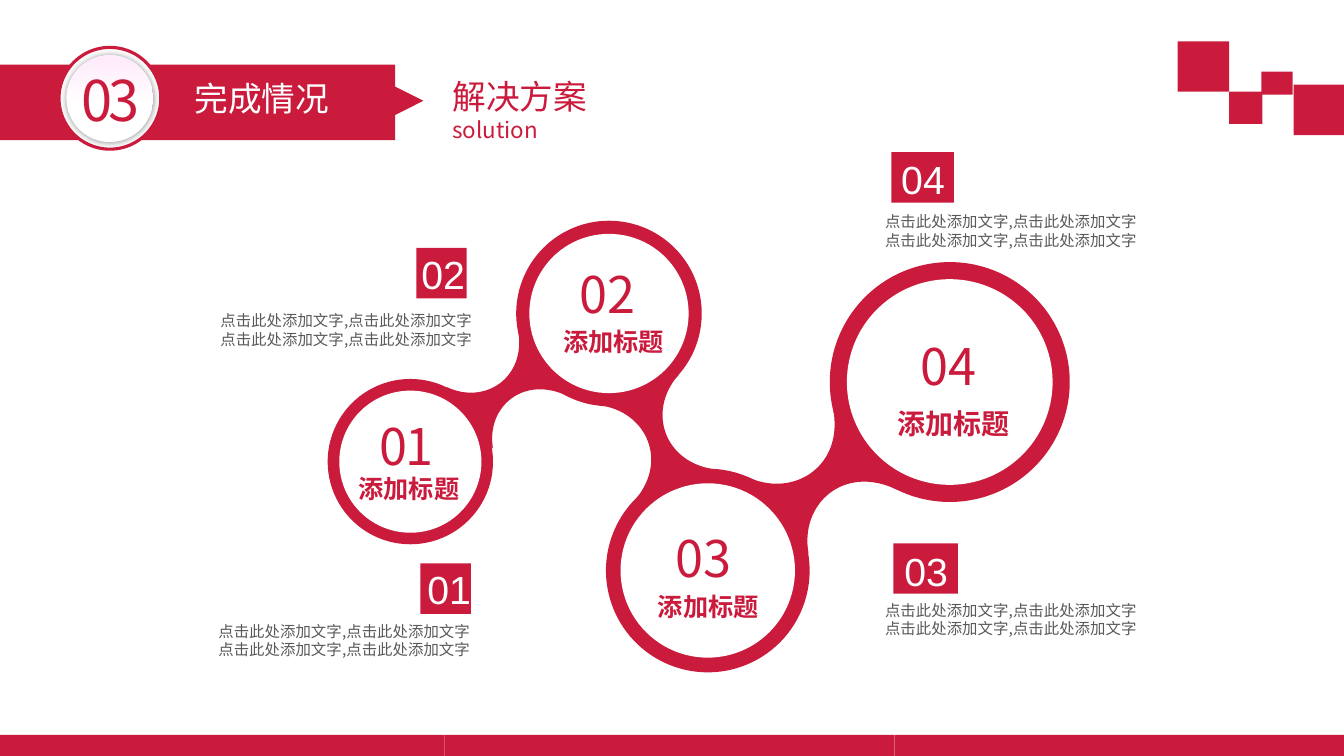
import pptx
import pptx.dml.color
import pptx.enum.dml
import pptx.enum.shapes
import pptx.enum.text
import pptx.oxml
import pptx.oxml.ns
import pptx.util
from lxml import etree

Inches = pptx.util.Inches
RGBColor = pptx.dml.color.RGBColor
SHAPE = pptx.enum.shapes.MSO_SHAPE
ALIGN = pptx.enum.text.PP_ALIGN
qn = pptx.oxml.ns.qn

CRIMSON = RGBColor(0xCB, 0x1B, 0x3D)
WHITE = RGBColor(0xFF, 0xFF, 0xFF)
PINK = RGBColor(0xFF, 0xEB, 0xFA)
GREY = RGBColor(0x59, 0x59, 0x59)
CJK = "Noto Sans CJK SC"
GLOW = (
    f'<a:effectLst {pptx.oxml.ns.nsdecls("a")}>'
    '<a:outerShdw blurRad="63500" dist="0" dir="0" algn="ctr" rotWithShape="0">'
    '<a:srgbClr val="000000"><a:alpha val="40000"/></a:srgbClr>'
    '</a:outerShdw></a:effectLst>'
)


def write(paragraph, text, size=11, color=CRIMSON, font=CJK, bold=False,
          align=ALIGN.LEFT, spacing=0):
    """Add one formatted run to a paragraph."""
    paragraph.alignment = align
    run = paragraph.add_run()
    run.text = text
    run.font.size = pptx.util.Pt(size)
    run.font.name = font
    run.font.bold = bold
    run.font.color.rgb = color
    properties = run._r.get_or_add_rPr()
    etree.SubElement(properties, qn("a:ea")).set("typeface", font)
    if spacing:
        properties.set("spc", str(round(spacing * 100)))


def curve(segments):
    """Merge three line segments into one cubic curve."""
    first = segments[0]
    bend = etree.Element(qn("a:cubicBezTo"))
    first.addprevious(bend)
    for segment in segments:
        bend.append(segment[0])
        segment.getparent().remove(segment)


class Deck:
    """Hold the slide and draw its elements in one style."""

    def __init__(self):
        """Open a presentation with one blank slide."""
        self.presentation = pptx.Presentation()
        self.presentation.slide_width = Inches(13.33)
        self.presentation.slide_height = Inches(7.5)
        self.slide = self.presentation.slides.add_slide(
            self.presentation.slide_layouts[6])

    def paint(self, shape, fill=CRIMSON):
        """Give a shape a plain fill without outline or shadow."""
        shape.shadow.inherit = False
        shape.fill.solid()
        shape.fill.fore_color.rgb = fill
        shape.line.fill.background()
        return shape

    def shape(self, kind, left, top, width, height, fill=CRIMSON, rotation=0):
        """Add a plain preset shape."""
        shape = self.slide.shapes.add_shape(
            kind, Inches(left), Inches(top), Inches(width), Inches(height))
        shape.rotation = rotation
        return self.paint(shape, fill)

    def disc(self, center_x, center_y, diameter, fill=CRIMSON):
        """Add a circle by its centre."""
        return self.shape(SHAPE.OVAL, center_x - diameter / 2,
                          center_y - diameter / 2, diameter, diameter, fill)

    def link(self, upper, lower):
        """Add a neck between two circles, bounded by two curves."""
        start, *rest = [(Inches(x), Inches(y)) for x, y in upper + lower]
        builder = self.slide.shapes.build_freeform(*start)
        builder.add_line_segments(rest, close=True)
        neck = self.paint(builder.convert_to_shape())
        segments = list(neck._element.spPr.iter(qn("a:lnTo")))
        curve(segments[:3])
        curve(segments[4:7])

    def text(self, left, top, width, height, *lines, wrap=True, **style):
        """Add a text box; a line is a string or a (string, size) pair."""
        box = self.slide.shapes.add_textbox(
            Inches(left), Inches(top), Inches(width), Inches(height))
        frame = box.text_frame
        frame.word_wrap = wrap
        frame.auto_size = pptx.enum.text.MSO_AUTO_SIZE.SHAPE_TO_FIT_TEXT
        for index, line in enumerate(lines):
            paragraph = frame.add_paragraph() if index else frame.paragraphs[0]
            if isinstance(line, tuple):
                write(paragraph, line[0], **{**style, "size": line[1]})
            else:
                write(paragraph, line, **style)

    def header(self):
        """Draw the section banner with its number medallion."""
        self.shape(SHAPE.RECTANGLE, -0.03, 0.64, 3.95, 0.75)
        self.shape(SHAPE.ISOSCELES_TRIANGLE, 3.92, 0.86, 0.28, 0.28, rotation=90)
        rim = self.disc(1.09, 0.975, 1.01, WHITE)
        rim.line.color.rgb = CRIMSON
        rim.line.width = pptx.util.Pt(2.25)
        face = self.disc(1.09, 0.98, 0.86, WHITE)
        face.fill.gradient()
        face.fill.gradient_angle = 90
        for stop, (position, color) in zip(face.fill.gradient_stops,
                                           ((0.4, WHITE), (1, PINK))):
            stop.position = position
            stop.color.rgb = color
        properties = face._element.spPr
        properties.replace(properties.find(qn("a:effectLst")),
                           pptx.oxml.parse_xml(GLOW))
        self.text(0.71, 0.6, 0.97, 0.77, "03", size=40, spacing=-3)
        self.text(1.83, 0.72, 2.08, 0.5, "完成情况", size=24, color=WHITE)
        self.text(4.39, 0.7, 2.94, 0.77, ("解决方案", 24), ("solution", 16))


LINKS = (
    (((4.43, 3.84), (4.81, 4.02), (5.22, 3.75), (5.14, 3.28)),
     ((5.63, 3.93), (5.2, 3.72), (4.82, 4.03), (4.89, 4.45))),
    (((6.73, 3.72), (6.41, 4.08), (6.59, 4.61), (7.12, 4.66)),
     ((6.28, 4.98), (6.64, 4.59), (6.42, 4.08), (5.94, 4.02))),
    (((7.43, 4.74), (7.89, 4.94), (8.38, 4.61), (8.26, 4.04)),
     ((8.9, 4.86), (8.37, 4.6), (7.93, 5), (8.02, 5.49))),
)
RINGS = ((4.07, 4.58, 1.64, 1.41), (6.04, 3.11, 1.84, 1.58),
         (7.02, 5.66, 2.02, 1.73), (9.42, 3.79, 2.38, 2.04))
LABELS = (
    ("01", (3.67, 4.07, 0.75, 0.71), -1.5, (3.45, 4.65, 1.21, 0.4), 18),
    ("02", (5.65, 2.56, 0.79, 0.71), 0, (5.43, 3.19, 1.31, 0.4), 18),
    ("03", (6.6, 5.18, 0.79, 0.71), 0, (6.42, 5.82, 1.21, 0.4), 18),
    ("04", (9.03, 3.28, 0.79, 0.71), 0, (8.8, 3.98, 1.32, 0.44), 20),
)
NOTES = (
    ("01", (4.17, 5.59, 0.5), (4.14, 5.56), (1.09, 6.12, 3.67, 0.47), ALIGN.RIGHT),
    ("04", (8.84, 1.51, 0.62), (8.84, 1.49), (8.68, 2.06, 3.6, 0.47), ALIGN.LEFT),
    ("02", (4.13, 2.46, 0.5), (4.08, 2.43), (1.33, 3.04, 3.45, 0.71), ALIGN.RIGHT),
    ("03", (8.86, 5.39, 0.64), (8.87, 5.38), (8.68, 5.91, 3.6, 0.47), ALIGN.LEFT),
)
MOSAIC = ((12.83, 0.84, 0.51, 0.5), (11.68, 0.41, 0.51, 0.5),
          (12.19, 0.91, 0.33, 0.32), (12.51, 0.71, 0.31, 0.23))
NOTE_LINE = "点击此处添加文字,点击此处添加文字"


def main():
    """Build the slide and save it."""
    deck = Deck()
    for upper, lower in LINKS:
        deck.link(upper, lower)
    for center_x, center_y, outer, inner in RINGS:
        deck.disc(center_x, center_y, outer)
        deck.disc(center_x, center_y, inner, WHITE)
    for number, number_area, spacing, title_area, title_size in LABELS:
        deck.text(*title_area, "添加标题", wrap=False, size=title_size,
                  bold=True, align=ALIGN.CENTER)
        deck.text(*number_area, number, wrap=False, size=36, spacing=spacing)
    for number, badge, number_corner, note_area, align in NOTES:
        deck.text(*note_area, NOTE_LINE, NOTE_LINE, color=GREY, align=align)
        deck.shape(SHAPE.RECTANGLE, *badge, 0.5)
        deck.text(*number_corner, 0.71, 0.57, number, size=28, color=WHITE,
                  font="Arial")
    deck.header()
    for tile in MOSAIC:
        deck.shape(SHAPE.RECTANGLE, *tile)
    for column in range(3):
        deck.shape(SHAPE.RECTANGLE, -0.05 + 4.46 * column, 7.29, 4.46, 0.29)
    deck.presentation.save("out.pptx")


if __name__ == "__main__":
    main()
